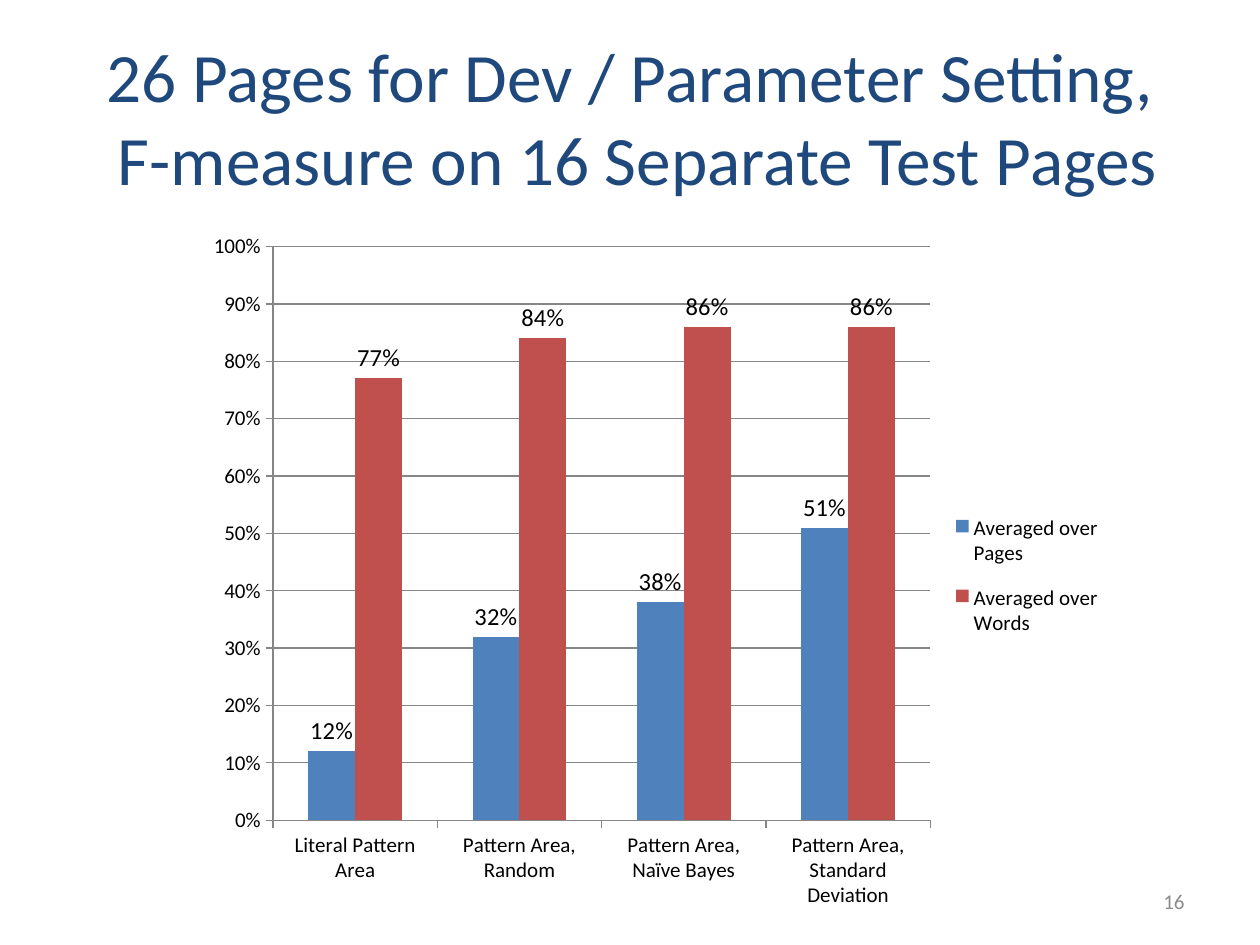
from lxml import etree
from pptx import Presentation
from pptx.chart.data import CategoryChartData
from pptx.dml.color import RGBColor
from pptx.enum.chart import XL_CHART_TYPE as CT, XL_LABEL_POSITION as LP
from pptx.enum.chart import XL_LEGEND_POSITION as LEG, XL_TICK_MARK as TICK
from pptx.enum.text import MSO_ANCHOR as ANCHOR, PP_ALIGN as AL
from pptx.oxml.ns import qn
from pptx.util import Inches, Pt

TITLE = "26 Pages for Dev / Parameter Setting,\v F-measure on 16 Separate Test Pages"
PAGE = "16"
CATEGORIES = ["Literal Pattern Area", "Pattern Area, Random",
              "Pattern Area, Naïve Bayes", "Pattern Area, Standard Deviation"]
SERIES = [
    ("Averaged over Pages", [0.12, 0.32, 0.38, 0.51], "4F81BD"),
    ("Averaged over Words", [0.77, 0.84, 0.86, 0.86], "C0504D"),
]
EDGES = {"xMode": "edge", "yMode": "edge"}
PLOT = {"layoutTarget": "inner", **EDGES, "x": 0.13, "y": 0.036, "w": 0.68, "h": 0.792}
LEGEND = {**EDGES, "x": 0.83, "y": 0.38, "w": 0.16, "h": 0.22}
FONT, GRAY = "Calibri", "868686"


def rgb(value):
    return RGBColor.from_string(value)


def set_font(font, size, color="000000"):
    font.name, font.size, font.bold = FONT, Pt(size), False
    font.color.rgb = rgb(color)


def add_text(s, text, box, size, color, align):
    tf = s.shapes.add_textbox(*map(Inches, box)).text_frame
    tf.word_wrap = True
    tf.vertical_anchor = ANCHOR.MIDDLE
    p = tf.paragraphs[0]
    p.text, p.alignment = text, align
    set_font(p.font, size, color)


def set_layout(part, index, settings):
    for old in part.findall(qn("c:layout")):
        part.remove(old)
    layout = etree.Element(qn("c:layout"))
    part.insert(index, layout)
    manual = etree.SubElement(layout, qn("c:manualLayout"))
    for tag, value in settings.items():
        etree.SubElement(manual, qn("c:" + tag)).set("val", str(value))


def add_column_chart(s, box):
    data = CategoryChartData(number_format="0%")
    data.categories = CATEGORIES
    for name, values, _ in SERIES:
        data.add_series(name, values)
    chart = s.shapes.add_chart(CT.COLUMN_CLUSTERED, *map(Inches, box), data).chart
    chart.has_title = False
    set_font(chart.font, 10)

    for axis in (chart.category_axis, chart.value_axis):
        axis.major_tick_mark, axis.minor_tick_mark = TICK.OUTSIDE, TICK.NONE
        axis.format.line.color.rgb = rgb(GRAY)
        set_font(axis.tick_labels.font, 12)
    val = chart.value_axis
    val.minimum_scale, val.maximum_scale, val.major_unit = 0, 1, 0.1
    val.tick_labels.number_format = "0%"
    val.tick_labels.number_format_is_linked = False
    val.major_gridlines.format.line.color.rgb = rgb(GRAY)

    chart.has_legend = True
    legend = chart.legend
    legend.position = LEG.RIGHT
    legend.include_in_layout = False
    set_font(legend.font, 12)

    plot = chart.plots[0]
    plot.vary_by_categories = False
    plot.gap_width, plot.overlap = 150, 0
    for series, (_, _, color) in zip(plot.series, SERIES):
        series.format.fill.solid()
        series.format.fill.fore_color.rgb = rgb(color)
        labels = series.data_labels
        labels.show_value = True
        labels.number_format, labels.number_format_is_linked = "0%", False
        labels.position = LP.OUTSIDE_END
        set_font(labels.font, 14)

    chart_xml = chart._chartSpace.chart
    set_layout(chart_xml.plotArea, 0, PLOT)
    set_layout(chart_xml.find(qn("c:legend")), 1, LEGEND)


def main():
    prs = Presentation()
    prs.slide_width, prs.slide_height = Inches(10), Inches(7.5)
    s = prs.slides.add_slide(prs.slide_layouts[6])
    add_text(s, TITLE, (0.5, 0.3, 9, 1.25), 39.6, "1F497D", AL.CENTER)
    add_text(s, PAGE, (7.17, 6.95, 2.33, 0.4), 12, "8C8C8C", AL.RIGHT)
    add_column_chart(s, (1.17, 1.75, 7.67, 5.75))
    prs.save("out.pptx")


if __name__ == "__main__":
    main()
